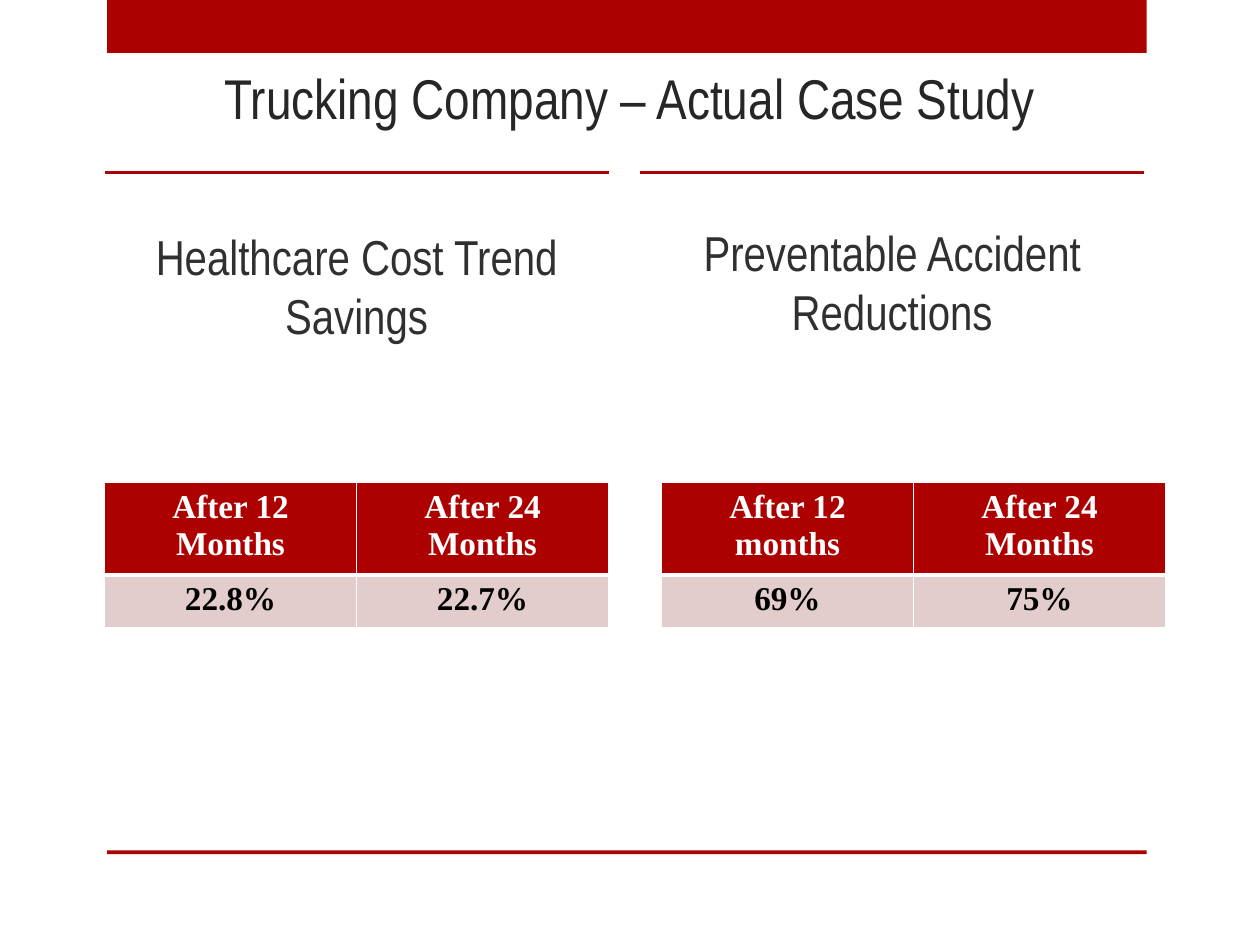
from lxml import etree
from pptx import Presentation
from pptx.dml.color import RGBColor
from pptx.enum import shapes, text
from pptx.oxml import ns
from pptx.util import Inches, Pt

RED = RGBColor(0xAD, 0x01, 0x01)
PINK = RGBColor(0xE3, 0xCC, 0xCC)
WHITE = RGBColor(0xFF, 0xFF, 0xFF)
BLACK = RGBColor(0x00, 0x00, 0x00)
TITLE_GRAY = RGBColor(0x26, 0x26, 0x26)
HEADING_GRAY = RGBColor(0x30, 0x30, 0x30)
HEADING_FONT = "Arial Narrow"
TABLE_FONT = "Times New Roman"


def format_paragraph(paragraph, font_name, size, color, bold=False):
    paragraph.alignment = text.PP_ALIGN.CENTER
    paragraph.font.name = font_name
    paragraph.font.size = Pt(size)
    paragraph.font.color.rgb = color
    paragraph.font.bold = bold


def add_bar(slide, top, height):
    bar = slide.shapes.add_shape(
        shapes.MSO_SHAPE.RECTANGLE, Inches(0.85), Inches(top), Inches(8.25), Inches(height)
    )
    bar.shadow.inherit = False
    bar.fill.solid()
    bar.fill.fore_color.rgb = RED
    bar.line.fill.background()


def add_rule(slide, left):
    rule = slide.shapes.add_connector(
        shapes.MSO_CONNECTOR.STRAIGHT,
        Inches(left), Inches(1.37), Inches(left + 4), Inches(1.37),
    )
    rule.line.color.rgb = RED
    rule.line.width = Pt(1.25)
    etree.SubElement(rule._element.spPr, ns.qn("a:effectLst"))


def set_title(slide, wording):
    title = slide.shapes.title
    title.left, title.top = Inches(0), Inches(0.17)
    title.width, title.height = Inches(10), Inches(0.92)
    title.text_frame.text = wording
    title.text_frame.vertical_anchor = text.MSO_ANCHOR.BOTTOM
    format_paragraph(title.text_frame.paragraphs[0], HEADING_FONT, 32, TITLE_GRAY)


def add_heading(slide, left, height, wording):
    heading = slide.shapes.add_textbox(Inches(left), Inches(2.08), Inches(4), Inches(height))
    frame = heading.text_frame
    frame.word_wrap = True
    frame.vertical_anchor = text.MSO_ANCHOR.BOTTOM
    frame.text = wording
    format_paragraph(frame.paragraphs[0], HEADING_FONT, 28, HEADING_GRAY)


def set_borders(cell, widths):
    properties = cell._tc.get_or_add_tcPr()
    for index, (side, width) in enumerate(widths.items()):
        border = etree.Element(ns.qn(f"a:{side}"), w=str(Pt(width)))
        fill = etree.SubElement(border, ns.qn("a:solidFill"))
        etree.SubElement(fill, ns.qn("a:srgbClr"), val=str(WHITE))
        properties.insert(index, border)


def add_results_table(slide, left, rows):
    frame = slide.shapes.add_table(
        len(rows), len(rows[0]), Inches(left), Inches(3.83), Inches(4), Inches(1.08)
    )
    table = frame.table
    row_styles = [
        (0.67, RED, WHITE, {"lnL": 1, "lnR": 1, "lnT": 1, "lnB": 3}),
        (0.41, PINK, BLACK, {"lnL": 1, "lnR": 1, "lnT": 3, "lnB": 1}),
    ]
    for row, values, (height, fill, color, borders) in zip(table.rows, rows, row_styles):
        row.height = Inches(height)
        for cell, value in zip(row.cells, values):
            cell.text = value
            cell.fill.solid()
            cell.fill.fore_color.rgb = fill
            format_paragraph(cell.text_frame.paragraphs[0], TABLE_FONT, 19, color, bold=True)
            set_borders(cell, borders)


def main():
    presentation = Presentation()
    presentation.slide_width = Inches(10)
    presentation.slide_height = Inches(7.5)
    slide = presentation.slides.add_slide(presentation.slide_layouts[5])

    add_bar(slide, 0, 0.42)
    add_bar(slide, 6.75, 0.03)
    for left in (0.83, 5.08):
        add_rule(slide, left)
    set_title(slide, "Trucking Company – Actual Case Study")
    add_heading(slide, 0.83, 0.7, "Healthcare Cost Trend Savings")
    add_heading(slide, 5.08, 0.67, "Preventable Accident Reductions")
    add_results_table(
        slide, 5.25, [("After 12 months", "After 24 Months"), ("69%", "75%")]
    )
    add_results_table(
        slide, 0.83, [("After 12 Months", "After 24 Months"), ("22.8%", "22.7%")]
    )
    presentation.save("out.pptx")


if __name__ == "__main__":
    main()
